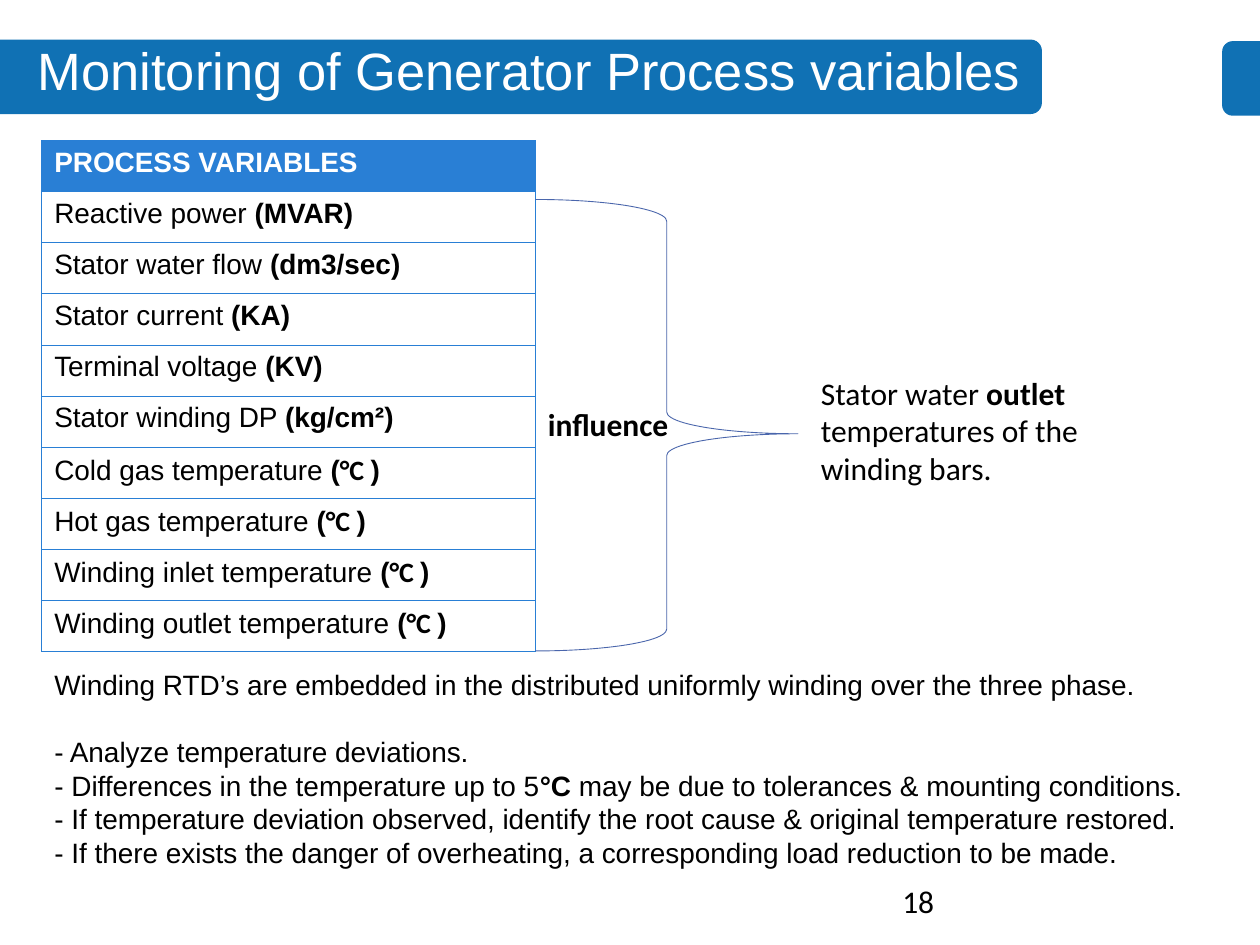
from lxml import etree
from pptx import Presentation
from pptx.dml.color import RGBColor
from pptx.enum.shapes import MSO_SHAPE
from pptx.enum.text import MSO_AUTO_SIZE, PP_ALIGN
from pptx.oxml import parse_xml
from pptx.oxml.ns import nsdecls, qn
from pptx.util import Pt

BAR = MSO_SHAPE.ROUND_2_SAME_RECTANGLE
BRACE = MSO_SHAPE.RIGHT_BRACE
LEFT, CENTER = PP_ALIGN.LEFT, PP_ALIGN.CENTER
NO_FIT = MSO_AUTO_SIZE.NONE
BOLD = {"bold": True}
CELSIUS = [("(", BOLD), ("°C ", {"bold": True, "font": "Calibri"}), (")", BOLD)]

VARIABLES = [
    ("Reactive power ", [("(MVAR)", BOLD)]),
    ("Stator water flow ", [("(dm3/sec)", BOLD)]),
    ("Stator current ", [("(KA)", BOLD)]),
    ("Terminal voltage ", [("(KV)", BOLD)]),
    ("Stator winding DP ", [("(kg/cm²)", BOLD)]),
    ("Cold gas temperature ", CELSIUS),
    ("Hot gas temperature ", CELSIUS),
    ("Winding inlet temperature ", CELSIUS),
    ("Winding outlet temperature ", CELSIUS),
]
NOTES = [
    ["Winding RTD’s are embedded in the distributed uniformly winding over the three phase."],
    ["- Analyze temperature deviations."],
    ["- Differences in the temperature up to 5", ("°C ", BOLD),
     "may be due to tolerances & mounting conditions."],
    ["- If temperature deviation observed, identify the root cause & original temperature restored."],
    ["- If there exists the danger of overheating, a corresponding load reduction to be made."],
]


def rgb(value):
    return RGBColor.from_string(value)


def add_run(p, text, font="Arial", size=16, color="000000", bold=False):
    r = p.add_run()
    r.text = text
    r.font.name = font
    r.font.size = Pt(size)
    r.font.bold = bold
    r.font.color.rgb = rgb(color)


def fill_paragraph(p, runs, **style):
    for run in runs:
        text, extra = (run, {}) if isinstance(run, str) else run
        add_run(p, text, **{**style, **extra})


class SlideBuilder:
    """Holds the colours and the current slide, and adds each kind of element."""

    bar_color = "1071B4"
    table_color = "297FD5"
    brace_color = "4A66AC"

    def __init__(self, prs):
        self.s = prs.slides.add_slide(prs.slide_layouts[6])

    def bar(self, left, top, width, height, rotation, radius):
        x, y = left + (width - height) / 2, top + (height - width) / 2
        sp = self.s.shapes.add_shape(BAR, Pt(x), Pt(y), Pt(height), Pt(width))
        sp.rotation = rotation
        sp.adjustments[0] = radius / min(width, height)
        sp.shadow.inherit = False
        sp.fill.solid()
        sp.fill.fore_color.rgb = rgb(self.bar_color)
        sp.line.fill.background()

    def brace(self, left, top, width, height):
        sp = self.s.shapes.add_shape(BRACE, Pt(left), Pt(top), Pt(width), Pt(height))
        sp.adjustments[0], sp.adjustments[1] = 0.083, 0.519
        sp.shadow.inherit = False
        sp.fill.background()
        sp.line.color.rgb = rgb(self.brace_color)
        sp.line.width = Pt(0.5)

    def text(self, left, top, width, height, paragraphs, align=LEFT, gap=0, wrap=False, **style):
        sp = self.s.shapes.add_textbox(Pt(left), Pt(top), Pt(width), Pt(height))
        tf = sp.text_frame
        tf.word_wrap = wrap
        tf.auto_size = NO_FIT
        for i, runs in enumerate(paragraphs):
            p = tf.add_paragraph() if i else tf.paragraphs[0]
            p.alignment = align
            if i == 1 and gap:
                p.space_before = Pt(gap)
            fill_paragraph(p, runs, **style)

    def borders(self, cell):
        tc_pr = cell._tc.get_or_add_tcPr()
        for i, side in enumerate("LRTB"):
            ln = parse_xml(f'<a:ln{side} {nsdecls("a")} w="{Pt(0.5)}"/>')
            fill = etree.SubElement(ln, qn("a:solidFill"))
            etree.SubElement(fill, qn("a:srgbClr"), val=self.table_color)
            tc_pr.insert(i, ln)

    def table(self, left, top, width, row_height, header, rows):
        count = len(rows) + 1
        frame = self.s.shapes.add_table(
            count, 1, Pt(left), Pt(top), Pt(width), Pt(row_height * count))
        table = frame.table
        lines = [[(header, {"bold": True, "color": "FFFFFF"})]]
        lines += [[label, *unit] for label, unit in rows]
        for i, runs in enumerate(lines):
            table.rows[i].height = Pt(row_height)
            cell = table.cell(i, 0)
            if i:
                cell.fill.background()
            else:
                cell.fill.solid()
                cell.fill.fore_color.rgb = rgb(self.table_color)
            self.borders(cell)
            fill_paragraph(cell.text_frame.paragraphs[0], runs)


def main():
    prs = Presentation()
    prs.slide_width, prs.slide_height = Pt(720), Pt(540)
    b = SlideBuilder(prs)
    b.bar(0, 22.6, 595.4, 42.6, 90, 6.5)
    b.bar(698.4, 23.5, 21.6, 42.6, -90, 6)
    b.text(12, 18, 581, 44, [["Monitoring of Generator Process variables"]],
           align=CENTER, size=30, color="FFFFFF")
    b.text(508.5, 500.4, 162, 28.8, [["18"]], wrap=True, font="Calibri", size=18)
    b.table(23.8, 80.3, 282, 29.22, "PROCESS VARIABLES", VARIABLES)
    b.brace(306, 114, 150, 258)
    b.text(462, 210, 182, 73,
           [["Stator water ", ("outlet", BOLD)], ["temperatures of the"], ["winding bars."]],
           font="Calibri", size=18)
    b.text(306, 228, 83, 29, [["influence"]], font="Calibri", size=18, bold=True)
    b.text(24, 378, 667, 124, NOTES, gap=19)
    prs.save("out.pptx")


if __name__ == "__main__":
    main()
